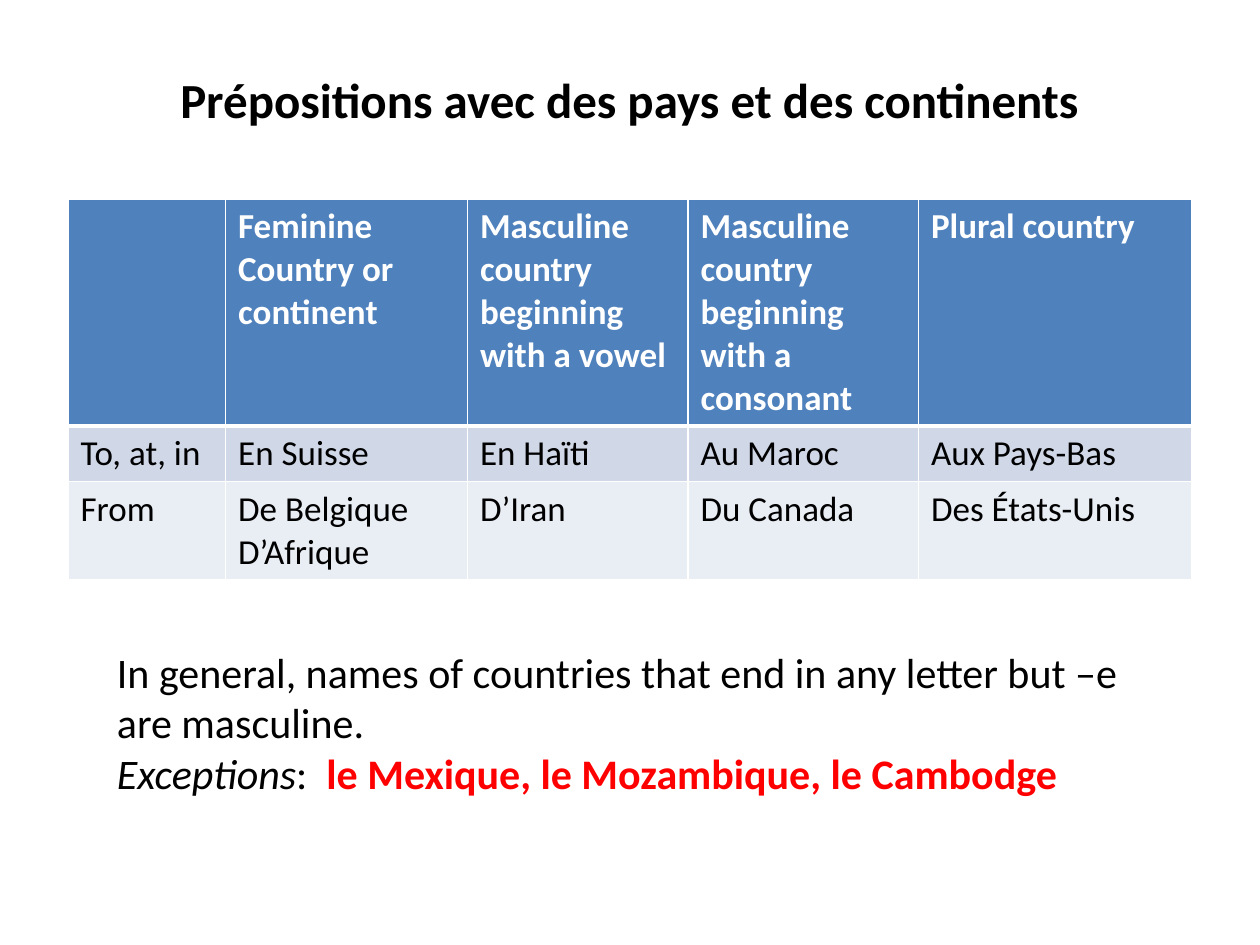
from dataclasses import dataclass

from lxml.etree import SubElement
from pptx import Presentation
from pptx.dml.color import RGBColor
from pptx.enum.text import MSO_ANCHOR, PP_ALIGN
from pptx.oxml.ns import qn
from pptx.util import Inches, Pt


@dataclass(frozen=True)
class Theme:
    font: str = "Calibri"
    ink: str = "000000"
    white: str = "FFFFFF"
    accent: str = "FF0000"
    row_fills: tuple = ("4F81BD", "D0D8E8", "E9EDF4")
    title_size: int = 28
    table_size: int = 20
    note_size: int = 24


THEME = Theme()

COLUMN_WIDTHS = (1.25, 1.92, 1.75, 1.83, 2.17)
ROW_HEIGHTS = (1.79, 0.43, 0.77)
ROWS = (
    ("", "Feminine Country or continent",
     "Masculine country beginning with a vowel",
     "Masculine country beginning with a consonant", "Plural country"),
    ("To, at, in", "En Suisse", "En Haïti", "Au Maroc", "Aux Pays-Bas"),
    ("From", "De Belgique\nD’Afrique", "D’Iran", "Du Canada", "Des États-Unis"),
)
NOTE = (
    (("In general, names of countries that end in any letter but –e are masculine.", {}),),
    (("Exceptions", {"italic": True}),
     (":  ", {}),
     ("le Mexique, le Mozambique, le Cambodge",
      {"bold": True, "color": THEME.accent})),
)


def add_run(p, text, size, color=THEME.ink, **formats):
    r = p.add_run()
    r.text = text
    r.font.color.rgb = RGBColor.from_string(color)
    for name, value in {"name": THEME.font, "size": Pt(size), **formats}.items():
        setattr(r.font, name, value)


def set_borders(cell, widths):
    tc_pr = cell._tc.get_or_add_tcPr()
    for i, (side, width) in enumerate(widths.items()):
        ln = SubElement(tc_pr, qn(f"a:ln{side}"), w=str(Pt(width)))
        fill = SubElement(ln, qn("a:solidFill"))
        SubElement(fill, qn("a:srgbClr"), val=THEME.white)
        # Border lines come before the cell fill
        tc_pr.insert(i, ln)


def add_title(slide, text, box):
    sp = slide.shapes.title
    sp.left, sp.top, sp.width, sp.height = map(Inches, box)
    tf = sp.text_frame
    tf.vertical_anchor = MSO_ANCHOR.MIDDLE
    p = tf.paragraphs[0]
    p.alignment = PP_ALIGN.CENTER
    add_run(p, text, THEME.title_size, bold=True)


def fill_cell(cell, text, row):
    header = row == 0
    cell.fill.solid()
    cell.fill.fore_color.rgb = RGBColor.from_string(THEME.row_fills[row])
    set_borders(cell, {"L": 1, "R": 1, "T": 3 if row == 1 else 1,
                       "B": 3 if header else 1})
    tf = cell.text_frame
    for i, line in enumerate(text.split("\n")):
        p = tf.add_paragraph() if i else tf.paragraphs[0]
        if line:
            add_run(p, line, THEME.table_size,
                    THEME.white if header else THEME.ink, bold=header)
        else:
            p.font.size = Pt(THEME.table_size)


def add_prepositions_table(slide, left, top):
    size = sum(COLUMN_WIDTHS), sum(ROW_HEIGHTS)
    table = slide.shapes.add_table(
        len(ROWS), len(COLUMN_WIDTHS), *map(Inches, (left, top, *size))).table
    for column, width in zip(table.columns, COLUMN_WIDTHS):
        column.width = Inches(width)
    for i, (row, height) in enumerate(zip(table.rows, ROW_HEIGHTS)):
        row.height = Inches(height)
        for cell, text in zip(row.cells, ROWS[i]):
            fill_cell(cell, text, i)


def add_note(slide, paragraphs, box):
    tf = slide.shapes.add_textbox(*map(Inches, box)).text_frame
    tf.word_wrap = True
    for i, runs in enumerate(paragraphs):
        p = tf.add_paragraph() if i else tf.paragraphs[0]
        for text, formats in runs:
            add_run(p, text, THEME.note_size, **formats)


def main():
    prs = Presentation()
    prs.slide_width, prs.slide_height = Inches(10), Inches(7.5)
    slide = prs.slides.add_slide(prs.slide_layouts[5])

    # Heading, table of prepositions, rule with its exceptions
    add_title(slide, "Prépositions avec des pays et des continents",
              (1.08, 0.5, 7.83, 0.57))
    add_prepositions_table(slide, 0.54, 1.58)
    add_note(slide, NOTE, (0.83, 5.08, 8.37, 1.31))

    prs.save("out.pptx")


if __name__ == "__main__":
    main()
